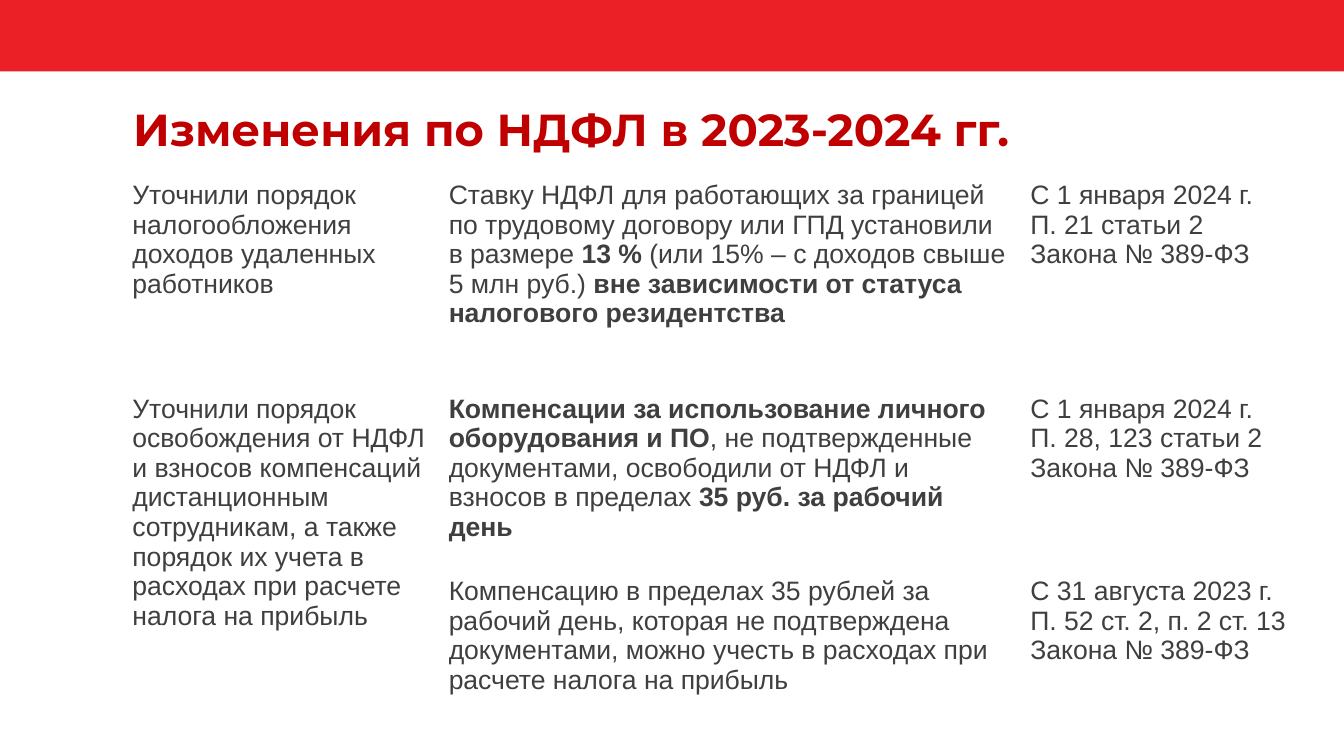
from pptx import Presentation
from pptx.dml.color import RGBColor
from pptx.enum.shapes import MSO_SHAPE
from pptx.util import Pt

SLIDE_WIDTH, SLIDE_HEIGHT = 960, 540
LEFT = 88
COLUMN_WIDTHS = [226, 415.5, 198]
ROW_HEIGHTS = [131, 152, 131]
ROW_TOP_MARGINS = [3.6, 25.3, 3.6]

# Each cell is a list of paragraphs; ** switches bold on and off.
CHANGES = [
    [
        ["Уточнили порядок налогообложения доходов удаленных работников"],
        ["Ставку НДФЛ для работающих за границей по трудовому договору или ГПД "
         "установили в размере **13 %** (или 15% – с доходов свыше 5 млн руб.) "
         "**вне зависимости от статуса налогового резидентства**"],
        ["С 1 января 2024 г.", "П. 21 статьи 2 Закона № 389-ФЗ"],
    ],
    [
        ["Уточнили порядок освобождения от НДФЛ и взносов компенсаций "
         "дистанционным сотрудникам, а также порядок их учета в расходах "
         "при расчете налога на прибыль"],
        ["**Компенсации за использование личного оборудования и ПО**, "
         "не подтвержденные документами, освободили от НДФЛ и взносов "
         "в пределах **35 руб. за рабочий день**"],
        ["С 1 января 2024 г.", "П. 28, 123 статьи 2 Закона № 389-ФЗ"],
    ],
    [
        None,
        ["Компенсацию в пределах 35 рублей за рабочий день, которая не "
         "подтверждена документами, можно учесть в расходах при расчете "
         "налога на прибыль"],
        ["С 31 августа 2023 г.", "П. 52 ст. 2, п. 2 ст. 13 Закона № 389-ФЗ"],
    ],
]


def color(hex_string):
    return RGBColor.from_string(hex_string)


def write(paragraph, text, font="Arial", size=19, fill="3F3F3F", bold=False):
    """Add text to the paragraph, with ** toggling bold."""
    for index, part in enumerate(text.split("**")):
        if part:
            run = paragraph.add_run()
            run.text = part
            run.font.name = font
            run.font.size = Pt(size)
            run.font.bold = bold != (index % 2 == 1)
            run.font.color.rgb = color(fill)


class TaxSlide:
    RED = "EB2027"
    TITLE = {"font": "Montserrat", "size": 32, "fill": "C00000", "bold": True}

    def __init__(self, slide):
        self.shapes = slide.shapes

    def band(self, height):
        band = self.shapes.add_shape(MSO_SHAPE.RECTANGLE, 0, 0, Pt(SLIDE_WIDTH), Pt(height))
        band.shadow.inherit = False
        band.fill.solid()
        band.fill.fore_color.rgb = color(self.RED)
        band.line.fill.background()

    def title(self, text, left, top, width, height):
        title = self.shapes.add_textbox(Pt(left), Pt(top), Pt(width), Pt(height))
        title.text_frame.word_wrap = True
        paragraph = title.text_frame.paragraphs[0]
        paragraph.line_spacing = 0.9
        write(paragraph, text, **self.TITLE)

    def table(self, rows, left, top):
        table = self.shapes.add_table(
            len(rows), len(COLUMN_WIDTHS), Pt(left), Pt(top),
            Pt(sum(COLUMN_WIDTHS)), Pt(sum(ROW_HEIGHTS))).table
        table.horz_banding = False
        for column, width in zip(table.columns, COLUMN_WIDTHS):
            column.width = Pt(width)
        for r, row in enumerate(rows):
            table.rows[r].height = Pt(ROW_HEIGHTS[r])
            for c, paragraphs in enumerate(row):
                self.cell(table.cell(r, c), paragraphs or [], ROW_TOP_MARGINS[r])
        return table

    def cell(self, cell, paragraphs, top_margin):
        cell.fill.background()
        cell.margin_left = cell.margin_right = Pt(6.6)
        cell.margin_top, cell.margin_bottom = Pt(top_margin), Pt(3)
        frame = cell.text_frame
        for index, text in enumerate(paragraphs):
            write(frame.add_paragraph() if index else frame.paragraphs[0], text)


def main():
    presentation = Presentation()
    presentation.slide_width = Pt(SLIDE_WIDTH)
    presentation.slide_height = Pt(SLIDE_HEIGHT)
    page = TaxSlide(presentation.slides.add_slide(presentation.slide_layouts[6]))

    page.band(51)
    page.title("Изменения по НДФЛ в 2023-2024 гг.", LEFT, 73.5, 828, 104)
    changes = page.table(CHANGES, LEFT, 125.3)
    changes.cell(1, 0).merge(changes.cell(2, 0))

    presentation.save("out.pptx")


if __name__ == "__main__":
    main()
